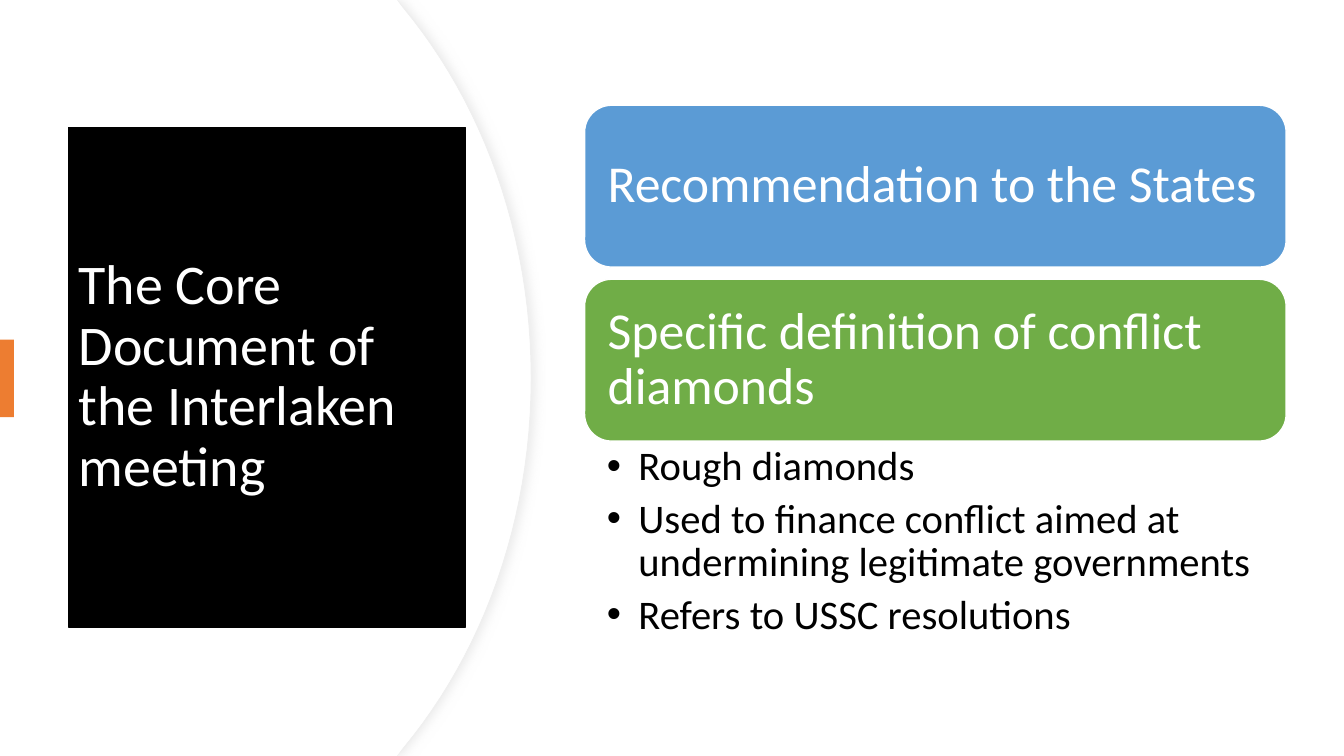
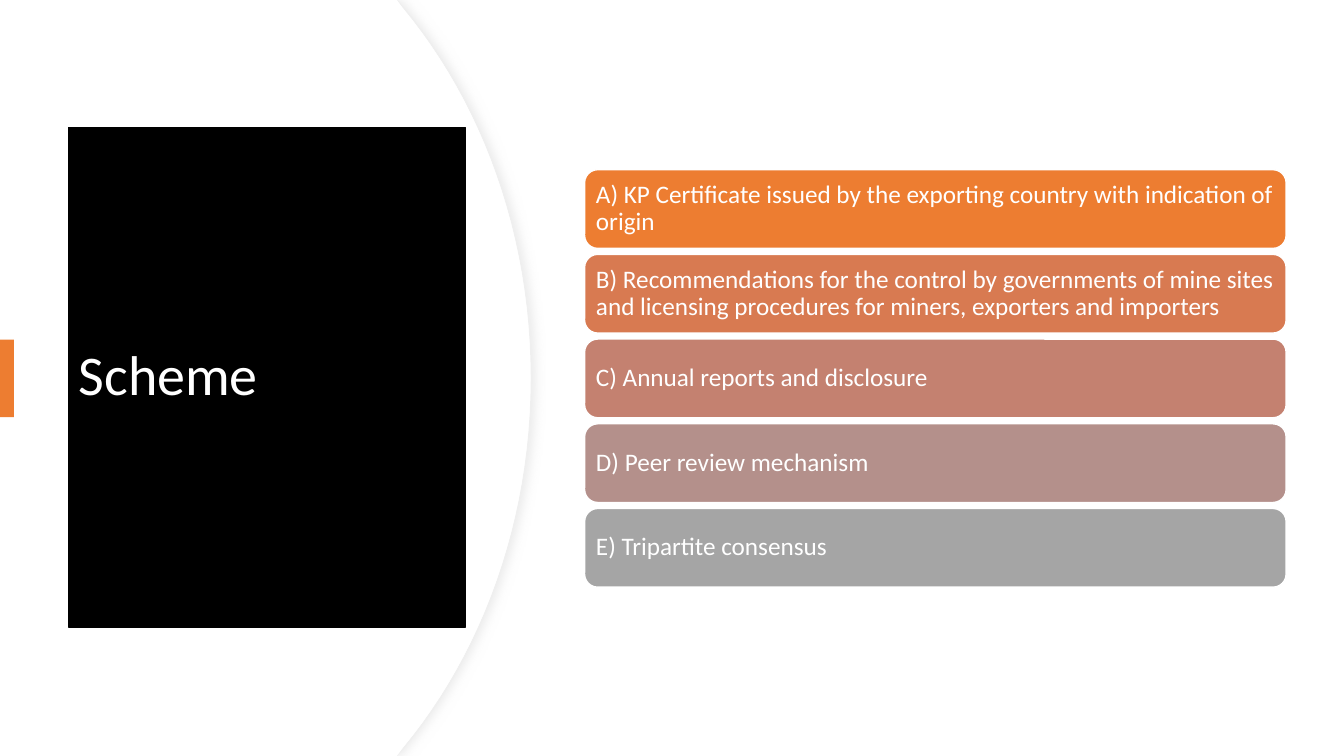
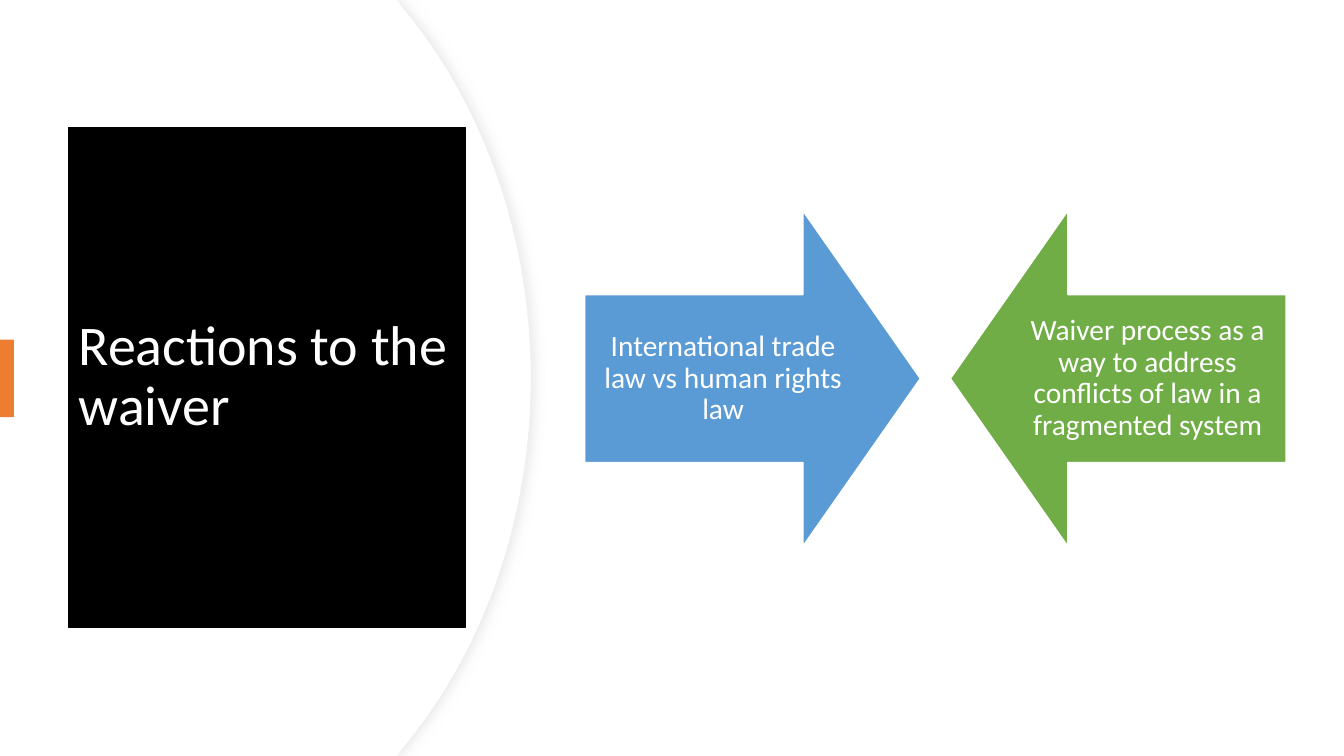
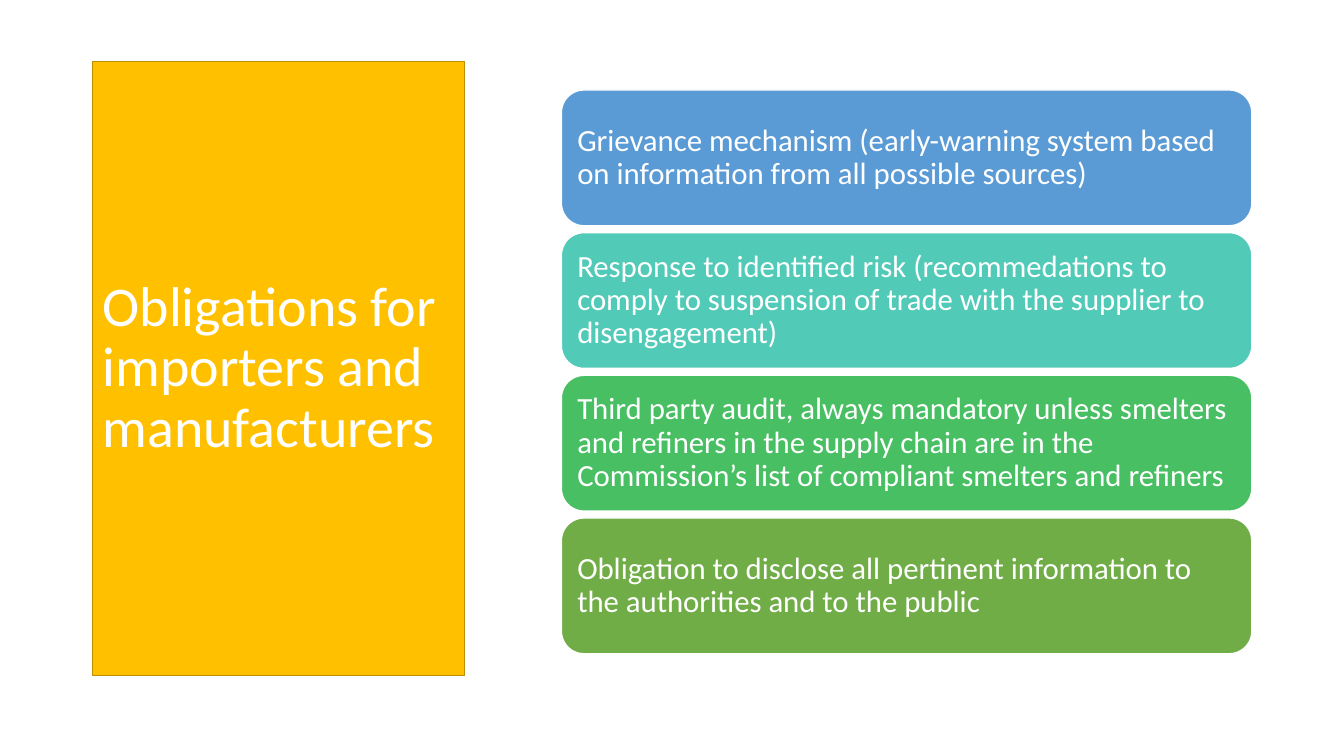
"""Build four slides on conflict minerals: a title panel beside cards, arrows or a list."""
from dataclasses import dataclass

from lxml import etree
from pptx import Presentation
from pptx.dml.color import RGBColor
from pptx.enum import shapes as kinds, text as txt
from pptx.oxml import ns
from pptx.util import Pt

FONT = "Calibri"
WHITE = RGBColor(0xFF, 0xFF, 0xFF)
BLACK = RGBColor(0x00, 0x00, 0x00)
EDGE = RGBColor(0xEF, 0xEF, 0xEF)
SHADE = RGBColor(0xD9, 0xD9, 0xD9)
ORANGE = RGBColor(0xED, 0x7D, 0x31)
RUST = RGBColor(0xD8, 0x7A, 0x51)
ROSE = RGBColor(0xC4, 0x81, 0x70)
MAUVE = RGBColor(0xB4, 0x90, 0x8B)
GREY = RGBColor(0xA5, 0xA5, 0xA5)
BLUE = RGBColor(0x5B, 0x9B, 0xD5)
TEAL = RGBColor(0x52, 0xCA, 0xB8)
MINT = RGBColor(0x49, 0xBF, 0x64)
GREEN = RGBColor(0x70, 0xAD, 0x47)
GOLD = RGBColor(0xFF, 0xC0, 0x00)
BRONZE = RGBColor(0xBD, 0x8E, 0x00)

KIND = kinds.MSO_SHAPE
ALIGN = txt.PP_ALIGN
ANCHOR = txt.MSO_ANCHOR
WIDE, HIGH = 960, 540
LEFT, SPAN = 417.6, 501.1
ARROW = 239.8


@dataclass(frozen=True)
class Box:
    left: float
    top: float
    width: float
    height: float

    def place(self, shape) -> None:
        shape.left, shape.top = Pt(self.left), Pt(self.top)
        shape.width, shape.height = Pt(self.width), Pt(self.height)


@dataclass(frozen=True)
class Card:
    words: str
    fill: RGBColor


@dataclass(frozen=True)
class Stack:
    first: Box
    pitch: float
    inset: float
    size: float


@dataclass(frozen=True)
class Panel:
    box: Box
    fill: RGBColor
    line: RGBColor


DARK = Panel(Box(49, 91.2, 283.7, 356.6), BLACK, BLACK)
AMBER = Panel(Box(66.2, 44, 265.7, 438.5), GOLD, BRONZE)
PAIR = Stack(Box(LEFT, 75.2, SPAN, 115.6), 124.3, 10.8, 37)
FIVE = Stack(Box(LEFT, 121.2, SPAN, 56.2), 60.5, 5.4, 18)
FOUR = Stack(Box(401, 64.3, 493.2, 97), 101.9, 6.6, 22)

CORE = [
    Card("Recommendation to the States", BLUE),
    Card("Specific definition of conflict diamonds", GREEN),
]
POINTS = [
    "Rough diamonds",
    "Used to finance conflict aimed at undermining legitimate governments",
    "Refers to USSC resolutions",
]
SCHEME = [
    Card("A) KP Certificate issued by the exporting country with indication of origin", ORANGE),
    Card("B) Recommendations for the control by governments of mine sites and licensing "
         "procedures for miners, exporters and importers", RUST),
    Card("C) Annual reports and disclosure", ROSE),
    Card("D) Peer review mechanism", MAUVE),
    Card("E) Tripartite consensus", GREY),
]
DUTIES = [
    Card("Grievance mechanism (early-warning system based on information from all "
         "possible sources)", BLUE),
    Card("Response to identified risk (recommedations to comply to suspension of trade "
         "with the supplier to disengagement)", TEAL),
    Card("Third party audit, always mandatory unless smelters and refiners in the supply "
         "chain are in the Commission’s list of compliant smelters and refiners", MINT),
    Card("Obligation to disclose all pertinent information to the authorities and to the "
         "public", GREEN),
]


def paint(shape, fill: RGBColor, line: RGBColor | None = None, width: float = 1) -> None:
    shape.fill.solid()
    shape.fill.fore_color.rgb = fill
    if line is None:
        shape.line.fill.background()
    else:
        shape.line.color.rgb = line
        shape.line.width = Pt(width)


def style(frame, size: float, color: RGBColor, align=ALIGN.LEFT,
          anchor=ANCHOR.MIDDLE) -> None:
    frame.word_wrap = True
    frame.auto_size = txt.MSO_AUTO_SIZE.NONE
    frame.vertical_anchor = anchor
    for para in frame.paragraphs:
        para.alignment = align
        para.line_spacing = 0.9
        para.space_before = Pt(0)
        for run in para.runs:
            run.font.name = FONT
            run.font.size = Pt(size)
            run.font.color.rgb = color


def pad(frame, left: float, top: float, right: float, low: float) -> None:
    frame.margin_left, frame.margin_top = Pt(left), Pt(top)
    frame.margin_right, frame.margin_bottom = Pt(right), Pt(low)


def block(slide, kind, box: Box, fill: RGBColor, line: RGBColor | None = None):
    shape = slide.shapes.add_shape(kind, 0, 0, 0, 0)
    box.place(shape)
    paint(shape, fill, line)
    shape.shadow.inherit = False
    return shape


def arc(slide, shift: float = 0):
    knots = [(288.5, 6), (344.5, 73.5), (379.5, 167), (379.5, HIGH / 2)]
    upper = []
    for step in range(25):
        t = step / 24
        parts = [(1 - t) ** 3, 3 * t * (1 - t) ** 2, 3 * t * t * (1 - t), t ** 3]
        upper.append((sum(p * k[0] for p, k in zip(parts, knots)) - shift,
                      sum(p * k[1] for p, k in zip(parts, knots))))
    lower = [(x, HIGH - y) for x, y in reversed(upper[:-1])]
    trail = [(283.5, 0), *upper, *lower, (283.5, HIGH), (0, HIGH)]
    pen = slide.shapes.build_freeform(0, 0)
    pen.add_line_segments([(Pt(x), Pt(y)) for x, y in trail], close=True)
    shape = pen.convert_to_shape()
    shape.shadow.inherit = False
    return shape


def cast(shape) -> None:
    glow = shape.element.spPr.find(ns.qn("a:effectLst"))
    outer = etree.SubElement(glow, ns.qn("a:outerShdw"), blurRad=str(Pt(7)),
                             dist=str(Pt(3)), dir="0", algn="l", rotWithShape="0")
    tint = etree.SubElement(outer, ns.qn("a:srgbClr"), val=str(SHADE))
    etree.SubElement(tint, ns.qn("a:alpha"), val="50000")


def curve(slide) -> None:
    rim = arc(slide)
    paint(rim, WHITE, EDGE, 0.75)
    cast(rim)
    paint(arc(slide, 0.72), WHITE)


def head(slide, words: str, panel: Panel) -> None:
    title = slide.shapes.title
    panel.box.place(title)
    paint(title, panel.fill, panel.line)
    title.text_frame.text = words
    style(title.text_frame, 40, WHITE)
    title.element.getparent().append(title.element)


def start(deck, words: str, panel: Panel = DARK, layout: int = 5):
    slide = deck.slides.add_slide(deck.slide_layouts[layout])
    if panel is DARK:
        curve(slide)
    head(slide, words, panel)
    if panel is DARK:
        block(slide, KIND.RECTANGLE, Box(0, 242.6, 10, 55.4), ORANGE)
    return slide


def label(shape, words: str, inset: float, size: float, align=ALIGN.LEFT) -> None:
    shape.text_frame.text = words
    pad(shape.text_frame, inset, inset, inset, inset)
    style(shape.text_frame, size, WHITE, align)


def pile(slide, stack: Stack, cards: list[Card]) -> None:
    base = stack.first
    for row, card in enumerate(cards):
        box = Box(base.left, base.top + row * stack.pitch, base.width, base.height)
        shape = block(slide, KIND.ROUNDED_RECTANGLE, box, card.fill, WHITE)
        label(shape, card.words, stack.inset, stack.size)


def arrow(slide, kind, left: float, card: Card) -> None:
    box = Box(left, 150.5, ARROW, ARROW)
    shape = block(slide, kind, box, card.fill, WHITE)
    shape.adjustments[0] = 0.5
    shape.adjustments[1] = 0.35
    label(shape, card.words, 11.5, 21, ALIGN.CENTER)


def bullets(slide, box: Box, lines: list[str]) -> None:
    body = slide.placeholders[1]
    box.place(body)
    frame = body.text_frame
    frame.text = "\n".join(lines)
    pad(frame, 15.9, 3.6, 20.9, 3.6)
    style(frame, 29, BLACK, anchor=ANCHOR.TOP)
    for para in frame.paragraphs:
        para.space_after = Pt(6)
        props = para._p.get_or_add_pPr()
        props.set("marL", str(Pt(22.5)))
        props.set("indent", str(-Pt(22.5)))


def main() -> None:
    deck = Presentation()
    deck.slide_width, deck.slide_height = Pt(WIDE), Pt(HIGH)

    slide = start(deck, "The Core Document of the Interlaken meeting", layout=1)
    pile(slide, PAIR, CORE)
    bullets(slide, Box(LEFT, 314.8, SPAN, 150.5), POINTS)

    pile(start(deck, "Scheme"), FIVE, SCHEME)

    slide = start(deck, "Reactions to the waiver")
    arrow(slide, KIND.RIGHT_ARROW, LEFT,
          Card("International trade law vs human rights law", BLUE))
    arrow(slide, KIND.LEFT_ARROW, LEFT + SPAN - ARROW,
          Card("Waiver process as a way to address conflicts of law in a fragmented system",
               GREEN))

    pile(start(deck, "Obligations for importers and manufacturers", AMBER), FOUR, DUTIES)
    deck.save("out.pptx")


if __name__ == "__main__":
    main()
